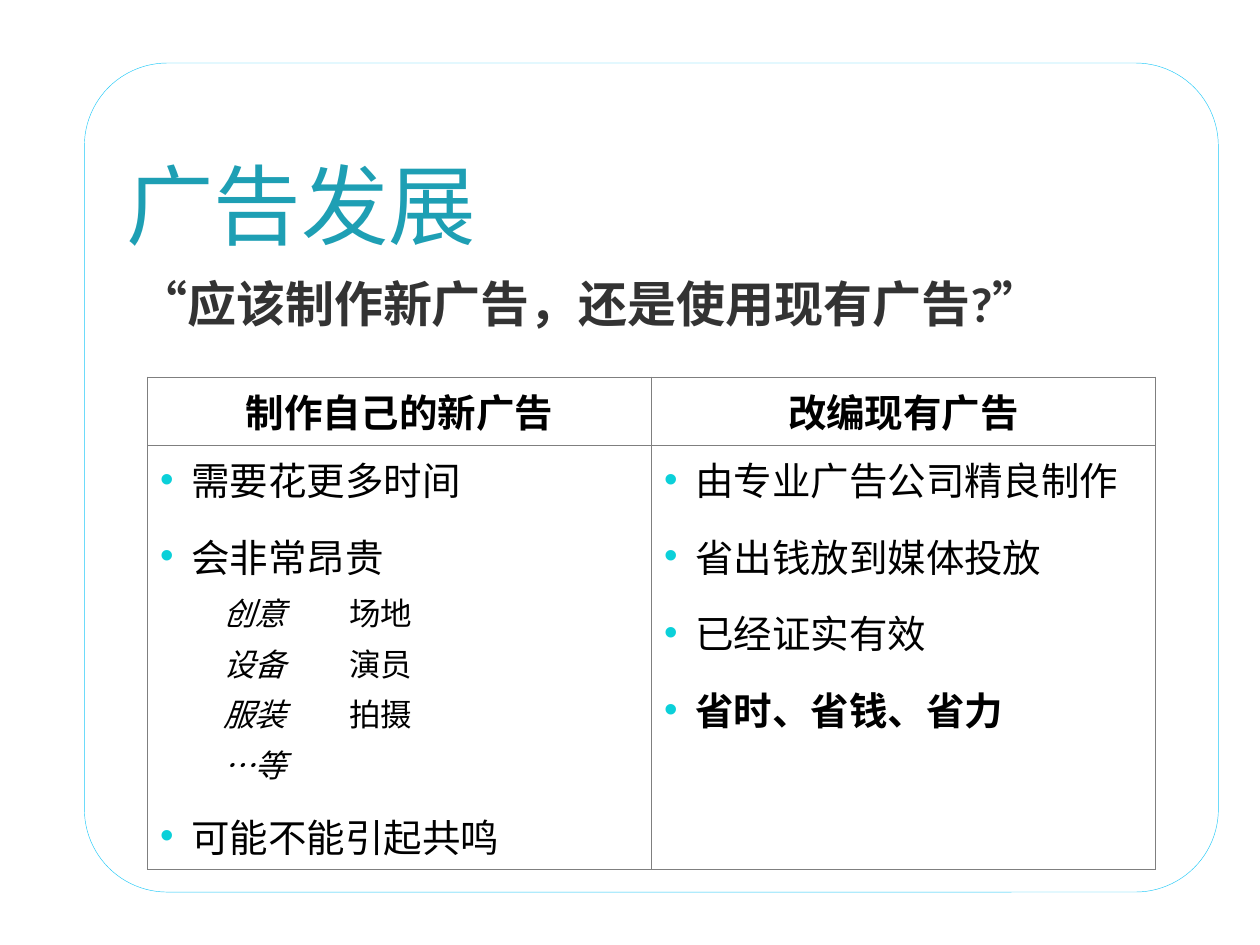
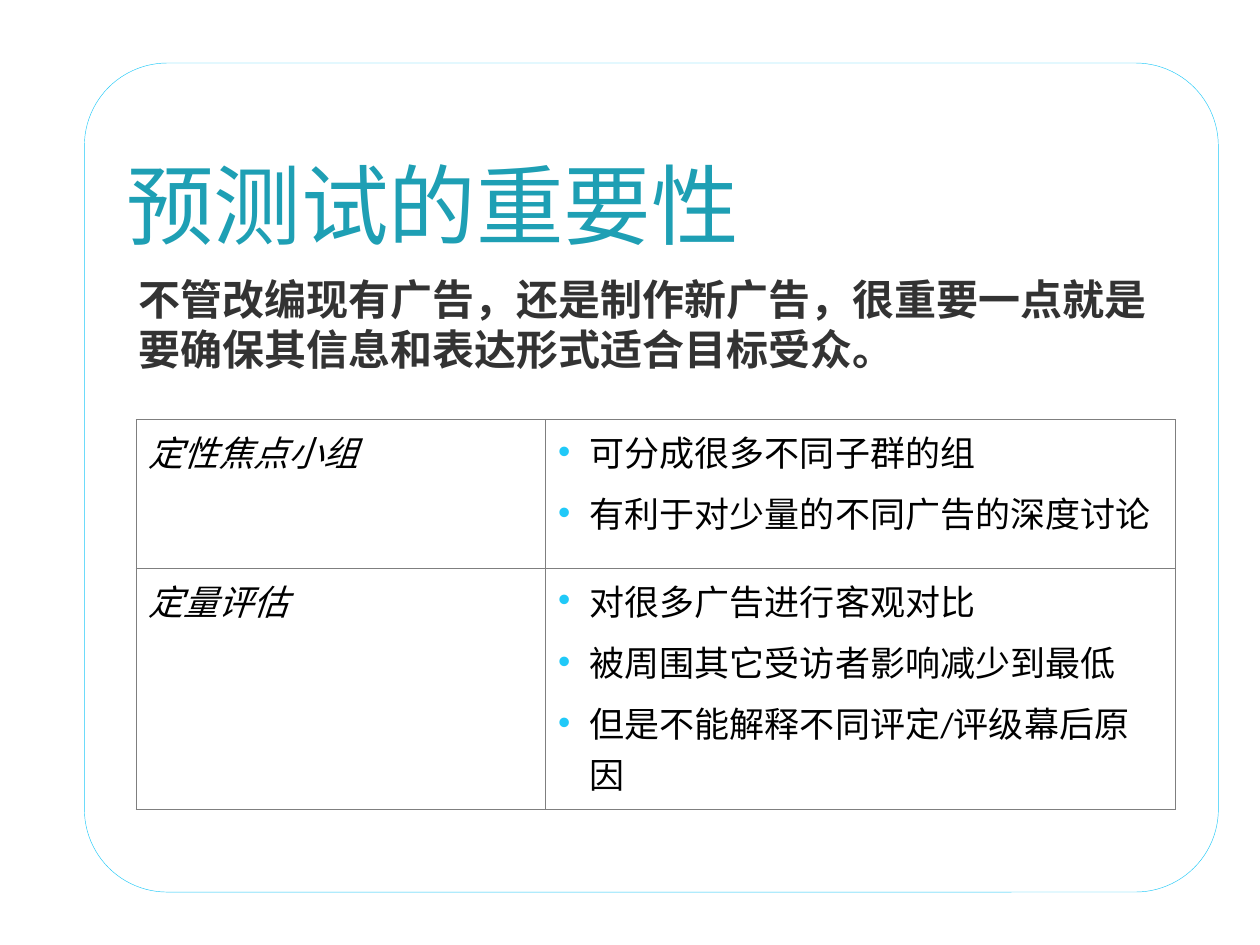
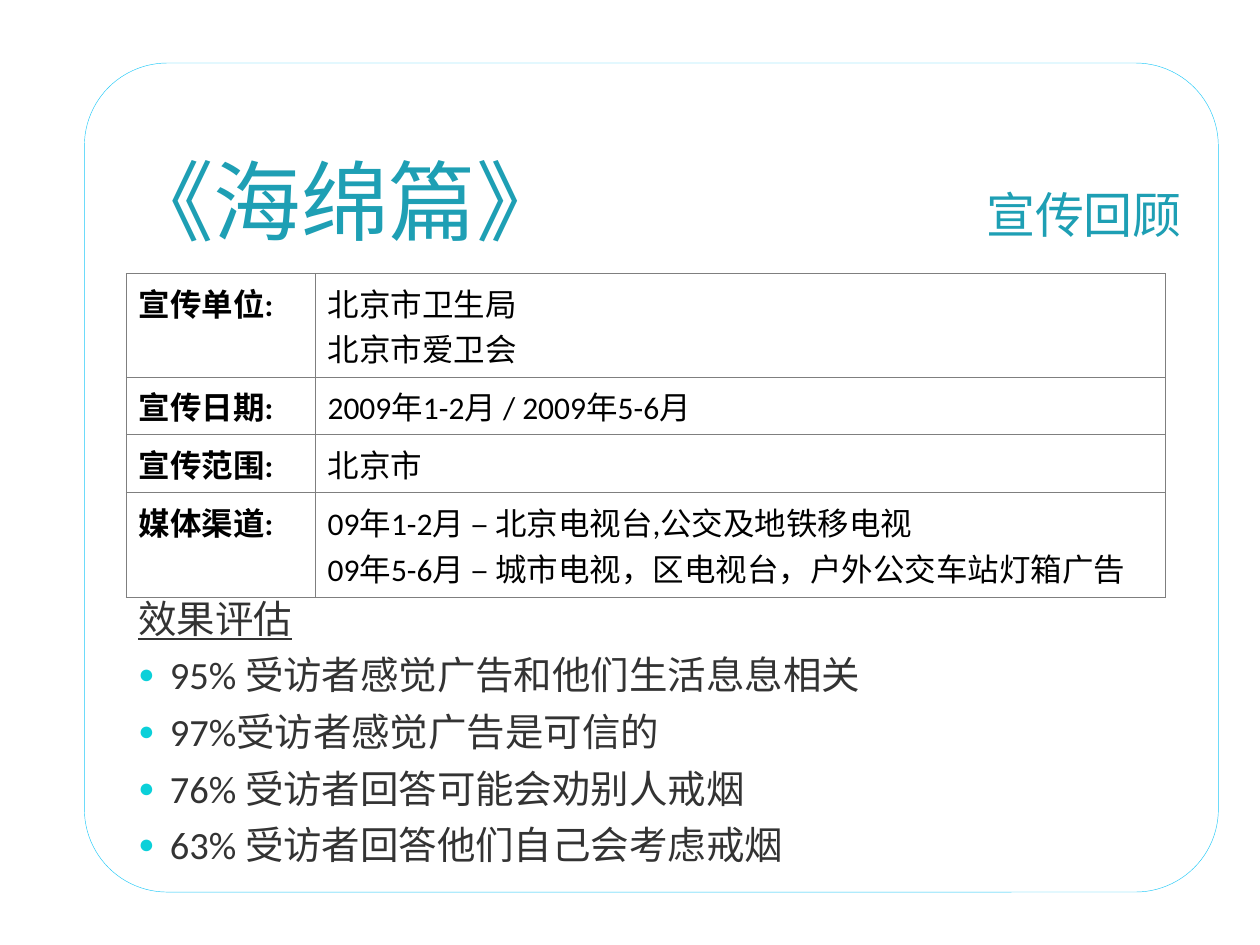
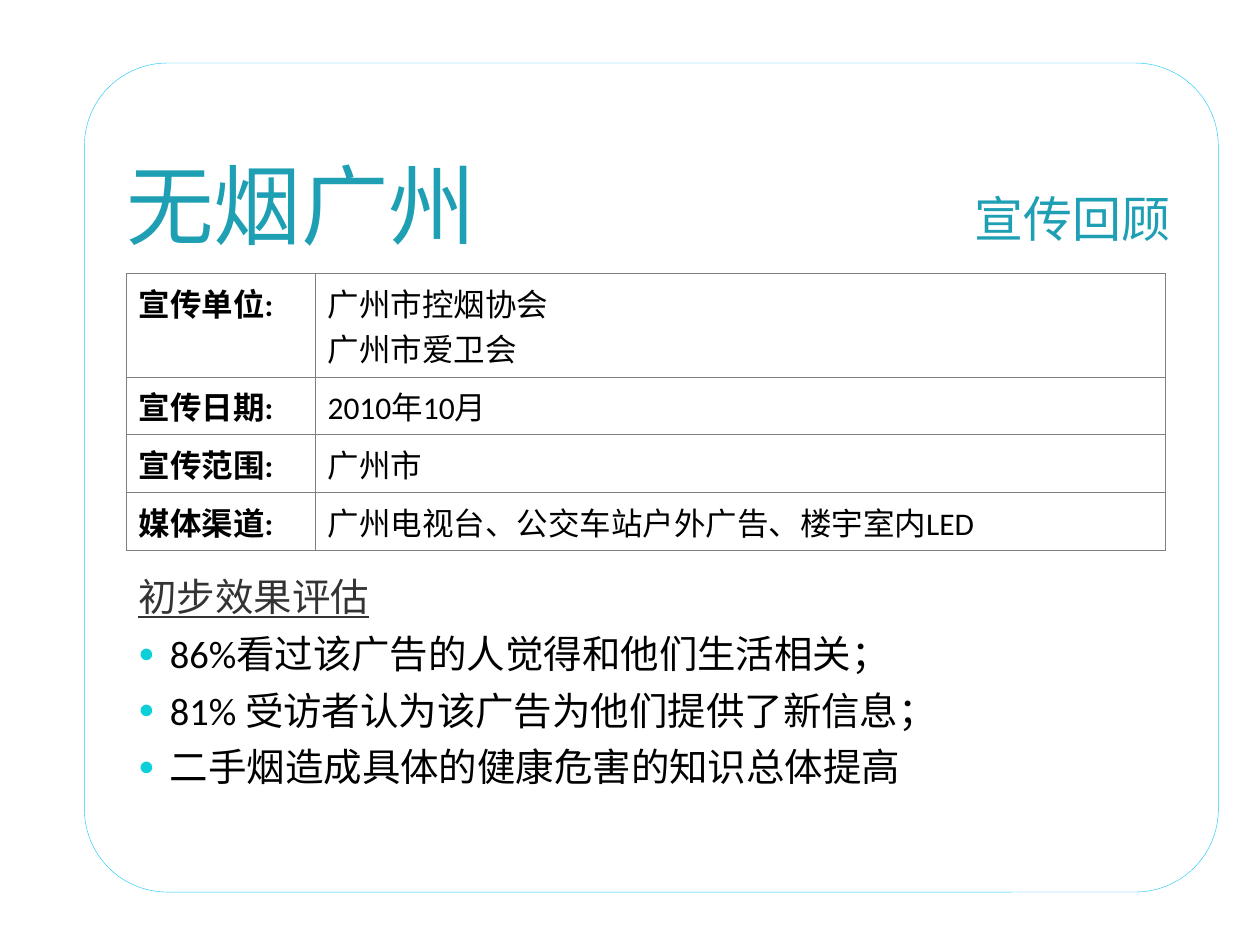
from lxml.etree import SubElement
from pptx import Presentation
from pptx.dml.color import RGBColor
from pptx.enum.shapes import MSO_SHAPE
from pptx.enum.text import MSO_ANCHOR, MSO_AUTO_SIZE, PP_ALIGN
from pptx.oxml.ns import qn
from pptx.util import Inches, Pt

# Shared look
FONT, SERIF = "Calibri", "Cambria"
TEAL, AQUA, SKY = "1E9FB4", "0BD0D9", "20C9F8"
DARK, BLACK, GREY = "333333", "000000", "7F7F7F"


def hue(code):
    return RGBColor.from_string(code)


def write(frame, text, size=18, color=BLACK, font=FONT, bold=False, italic=False,
          under=False, mark=None, dot="•", scale=100, left=0, hang=0, after=0,
          align=PP_ALIGN.LEFT, join=False):
    """Add a paragraph, or with join a run to the last paragraph."""
    para = frame.paragraphs[-1]
    if not join:
        if para.runs:
            para = frame.add_paragraph()
        para.alignment = align
        para.space_before, para.space_after = Pt(0), Pt(after)
        props = para._p.get_or_add_pPr()
        if mark:
            left, hang = 0.25, 0.25
            tint = SubElement(props, qn("a:buClr"))
            SubElement(tint, qn("a:srgbClr"), val=mark)
            SubElement(props, qn("a:buSzPct"), val=str(scale * 1000))
            SubElement(props, qn("a:buFont"), typeface="Arial")
            SubElement(props, qn("a:buChar"), char=dot)
        props.set("marL", str(Inches(left)))
        props.set("indent", str(-Inches(hang)))
    run = para.add_run()
    run.text = text
    face = run.font
    face.name, face.size, face.color.rgb = font, Pt(size), hue(color)
    face.bold, face.italic, face.underline = bold, italic, under


# Text styles
head = dict(size=22, bold=True, align=PP_ALIGN.CENTER)
item = dict(size=22, mark=AQUA, after=12)
sub = dict(size=18, italic=True, left=0.5, after=3)
pair = dict(size=18, font=SERIF, join=True)
kind = dict(size=20, italic=True, after=3)
point = dict(size=20, mark=SKY, after=6)
label = dict(size=18, bold=True)
fact = dict(size=18)
topic = dict(size=22, color=DARK, under=True, after=6)
stat = dict(size=22, mark=AQUA, dot="●", scale=70, after=6)
dark = dict(stat, color=DARK)

# Campaign tables: the same four labels, each with its own facts
labels = ["宣传单位:", "宣传日期:", "宣传范围:", "媒体渠道:"]
sponge = [
    ["北京市卫生局", "北京市爱卫会"],
    ["2009年1-2月 / 2009年5-6月"],
    ["北京市"],
    ["09年1-2月 – 北京电视台,公交及地铁移电视",
     "09年5-6月 – 城市电视，区电视台，户外公交车站灯箱广告"],
]
canton = [
    ["广州市控烟协会", "广州市爱卫会"],
    ["2010年10月"],
    ["广州市"],
    ["广州电视台、公交车站户外广告、楼宇室内LED"],
]
sheets = [
    [[[(name, label)], [(text, fact) for text in facts]]
     for name, facts in zip(labels, group)]
    for group in (sponge, canton)
]

# Slide content
pages = [
    dict(
        title="广告发展", top=0.78, body=(2.12, 4.8),
        lead=[("“应该制作新广告，还是使用现有广告?”",
               dict(size=28, color=DARK, bold=True, left=0.25, hang=0.25))],
        spot=(1.17, 2.99), cols=[4, 4], rows=[0.54, 3.37],
        cells=[
            [[("制作自己的新广告", head)], [("改编现有广告", head)]],
            [[("需要花更多时间", item),
              ("会非常昂贵", dict(item, after=3)),
              ("创意\t", sub), ("场地", pair),
              ("设备\t", sub), ("演员", pair),
              ("服装\t", sub), ("拍摄", pair),
              ("…等", dict(sub, after=12)),
              ("可能不能引起共鸣", dict(item, after=3))],
             [("由专业广告公司精良制作", item),
              ("省出钱放到媒体投放", item),
              ("已经证实有效", item),
              ("省时、省钱、省力", dict(item, bold=True))]],
        ]),
    dict(
        title="预测试的重要性", top=0.78, body=(2.12, 4.8),
        lead=[("不管改编现有广告，还是制作新广告，很重要一点就是要确保其信息和表达形式适合目标受众。",
               dict(size=24, color=DARK, bold=True))],
        spot=(1.08, 3.33), cols=[3.25, 5], rows=[1.18, 1.91],
        cells=[
            [[("定性焦点小组", kind)],
             [("可分成很多不同子群的组", point),
              ("有利于对少量的不同广告的深度讨论", point)]],
            [[("定量评估", kind)],
             [("对很多广告进行客观对比", point),
              ("被周围其它受访者影响减少到最低", point),
              ("但是不能解释不同评定/评级幕后原因", point)]],
        ]),
    dict(
        title="《海绵篇》", end=9.38, top=0.75, body=(4.67, 2.25),
        lead=[("效果评估", topic),
              ("95% 受访者感觉广告和他们生活息息相关", dark),
              ("97%受访者感觉广告是可信的", dark),
              ("76% 受访者回答可能会劝别人戒烟", dark),
              ("63% 受访者回答他们自己会考虑戒烟", dark)],
        spot=(1, 2.17), cols=[1.5, 6.75], rows=[0.82, 0.46, 0.46, 0.83],
        cells=sheets[0]),
    dict(
        title="无烟广州", end=9.29, top=0.78, body=(4.5, 2.42),
        lead=[("初步效果评估", topic),
              ("86%看过该广告的人觉得和他们生活相关；", stat),
              ("81% 受访者认为该广告为他们提供了新信息；", stat),
              ("二手烟造成具体的健康危害的知识总体提高", stat)],
        spot=(1, 2.17), cols=[1.5, 6.75], rows=[0.82, 0.46, 0.46, 0.46],
        cells=sheets[1]),
]

deck = Presentation()
deck.slide_width, deck.slide_height = Inches(10), Inches(7.5)
plain = deck.slide_layouts[5]

for page in pages:
    slide = deck.slides.add_slide(plain)

    # Rounded frame, drawn once and kept on the master
    if page is pages[0]:
        edge = slide.shapes.add_shape(MSO_SHAPE.ROUNDED_RECTANGLE, Inches(0.67),
                                      Inches(0.5), Inches(9), Inches(6.58))
        edge.adjustments[0] = 0.1
        edge.shadow.inherit = False
        edge.fill.background()
        edge.line.color.rgb, edge.line.width = hue(SKY), Pt(0.25)
        deck.slide_master.shapes._spTree.insert(2, edge._element)

    # Title, with a right-hand note on campaign slides
    title = slide.shapes.title
    title.left, title.top = Inches(1), Inches(page["top"])
    title.width, title.height = Inches(8.42), Inches(1.25)
    heads = [(title, page["title"], 50, PP_ALIGN.LEFT, 0)]
    if "end" in page:
        note = slide.shapes.add_textbox(Inches(page["end"] - 2), title.top,
                                        Inches(2), title.height)
        heads.append((note, "宣传回顾", 28, PP_ALIGN.RIGHT, 0.07))
    for shape, text, size, align, lift in heads:
        frame = shape.text_frame
        frame.word_wrap, frame.auto_size = True, MSO_AUTO_SIZE.NONE
        frame.vertical_anchor = MSO_ANCHOR.BOTTOM
        frame.margin_left = frame.margin_right = 0
        frame.margin_bottom = Inches(lift)
        write(frame, text, size=size, color=TEAL, align=align)

    # Body text
    top, tall = page["body"]
    box = slide.shapes.add_textbox(Inches(1), Inches(top), Inches(8.42), Inches(tall))
    box.text_frame.word_wrap = True
    for text, style in page["lead"]:
        write(box.text_frame, text, **style)

    # Table
    left, top = page["spot"]
    cols, rows = page["cols"], page["rows"]
    grid = slide.shapes.add_table(len(rows), len(cols), Inches(left), Inches(top),
                                  Inches(sum(cols)), Inches(sum(rows))).table
    grid.first_row = grid.horz_banding = False
    for col, wide in zip(grid.columns, cols):
        col.width = Inches(wide)
    for row, tall, line in zip(grid.rows, rows, page["cells"]):
        row.height = Inches(tall)
        for cell, paras in zip(row.cells, line):
            props = cell._tc.get_or_add_tcPr()
            for side in ("lnL", "lnR", "lnT", "lnB"):
                rule = SubElement(props, qn("a:" + side), w=str(Pt(0.25)))
                fill = SubElement(rule, qn("a:solidFill"))
                SubElement(fill, qn("a:srgbClr"), val=GREY)
            cell.fill.background()
            if paras[0][1] is head:
                cell.vertical_anchor = MSO_ANCHOR.MIDDLE
            for text, style in paras:
                write(cell.text_frame, text, **style)

deck.save("out.pptx")
